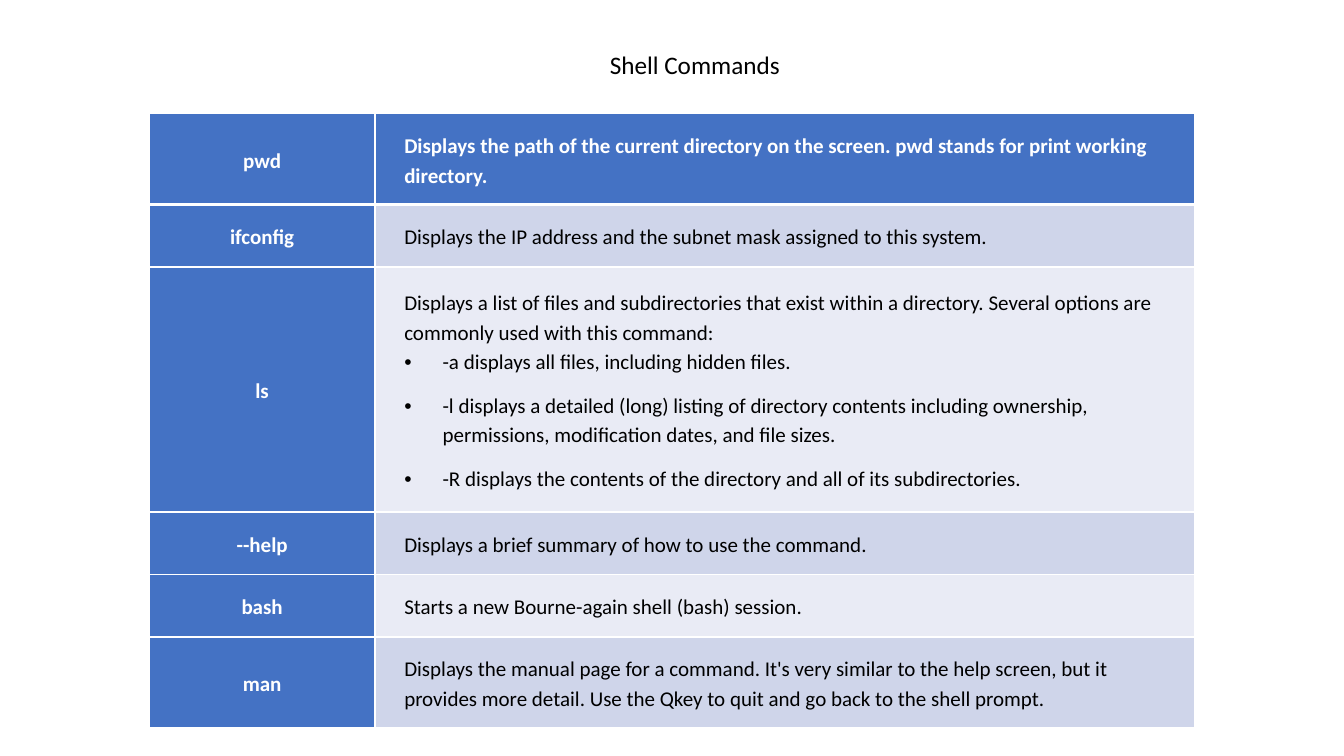
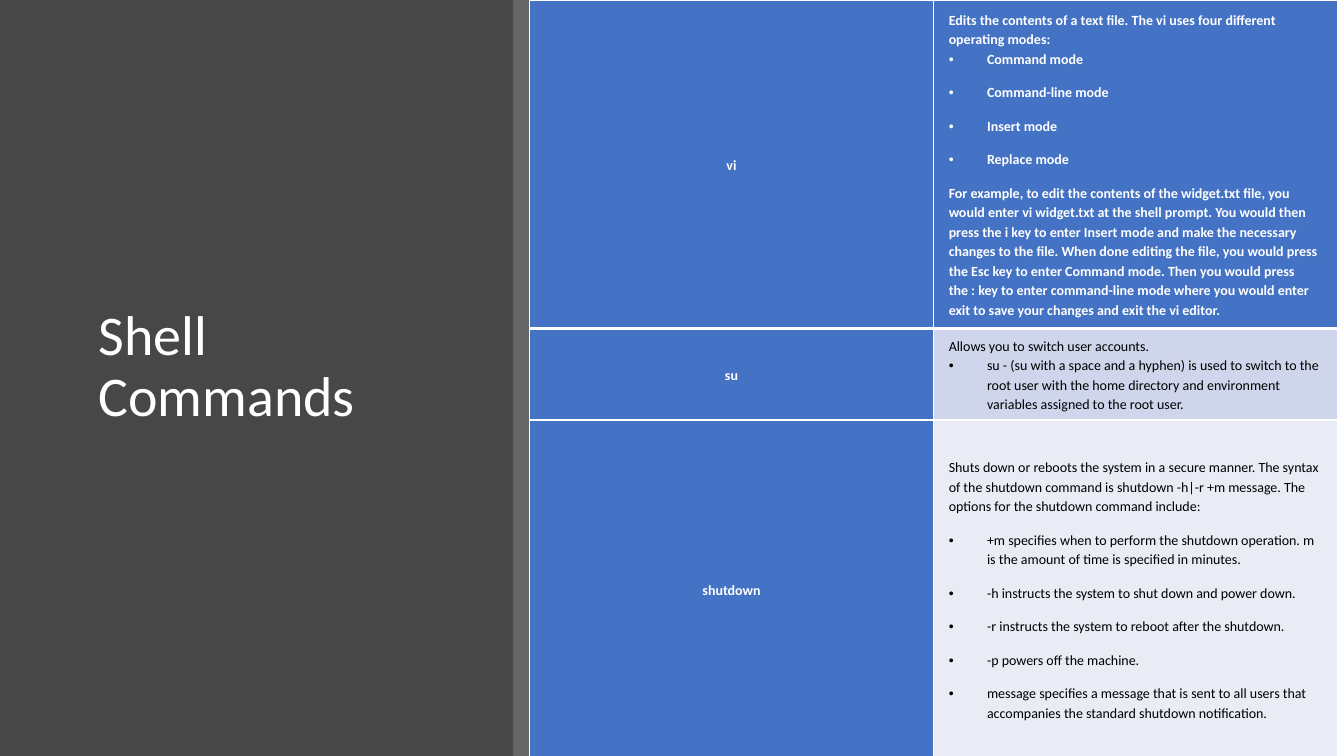
from typing import NamedTuple

from lxml import etree
from pptx import Presentation
from pptx import util as u
from pptx.dml import color
from pptx.enum import shapes, text
from pptx.oxml import ns

FONT = "Calibri"
WHITE, BLACK, GREY = "FFFFFF", "000000", "404040"
BLUE, BANDS = "4472C4", ("E9EBF5", "CFD5EA")


class Line(NamedTuple):
    """One paragraph: its words, the points after it, and a bullet or not."""
    words: str
    gap: int = 0
    dot: bool = False


def item(words):
    return Line(words, 10, True)


# Command, then the paragraphs that explain it
BASICS = [
    ("pwd", [Line("Displays the path of the current directory on the screen. "
                  "pwd stands for print working directory.")]),
    ("ifconfig", [Line("Displays the IP address and the subnet mask assigned "
                       "to this system.")]),
    ("ls", [
        Line("Displays a list of files and subdirectories that exist within a "
             "directory. Several options are commonly used with this command:"),
        item("-a displays all files, including hidden files."),
        item("-l displays a detailed (long) listing of directory contents "
             "including ownership, permissions, modification dates, and file sizes."),
        item("-R displays the contents of the directory and all of its "
             "subdirectories."),
    ]),
    ("--help", [Line("Displays a brief summary of how to use the command.")]),
    ("bash", [Line("Starts a new Bourne-again shell (bash) session.")]),
    ("man", [Line("Displays the manual page for a command. It's very similar to "
                  "the help screen, but it provides more detail. Use the Qkey to "
                  "quit and go back to the shell prompt.")]),
]
TOOLS = [
    ("vi", [
        Line("Edits the contents of a text file. The vi uses four different "
             "operating modes:"),
        item("Command mode"),
        item("Command-line mode"),
        item("Insert mode"),
        item("Replace mode"),
        Line("For example, to edit the contents of the widget.txt file, you would "
             "enter vi widget.txt at the shell prompt. You would then press the i "
             "key to enter Insert mode and make the necessary changes to the file. "
             "When done editing the file, you would press the Esc key to enter "
             "Command mode. Then you would press the : key to enter command-line "
             "mode where you would enter exit to save your changes and exit the vi "
             "editor."),
    ]),
    ("su", [
        Line("Allows you to switch user accounts."),
        item("su - (su with a space and a hyphen) is used to switch to the root "
             "user with the home directory and environment variables assigned to "
             "the root user."),
    ]),
    ("shutdown", [
        Line("Shuts down or reboots the system in a secure manner. The syntax of "
             "the shutdown command is shutdown -h|-r +m message. The options for "
             "the shutdown command include:", 10),
        item("+m specifies when to perform the shutdown operation. m is the amount "
             "of time is specified in minutes."),
        item("-h instructs the system to shut down and power down."),
        item("-r instructs the system to reboot after the shutdown."),
        item("-p powers off the machine."),
        item("message specifies a message that is sent to all users that "
             "accompanies the standard shutdown notification."),
    ]),
]


def rgb(code):
    return color.RGBColor.from_string(code)


def add(node, tag, **attrs):
    return etree.SubElement(node, ns.qn(tag), **attrs)


def paint(fill, code):
    fill.solid()
    fill.fore_color.rgb = rgb(code)


def write(par, words, size, ink, bold=False):
    run = par.add_run()
    run.text = words
    font = run.font
    font.name, font.size, font.bold = FONT, u.Pt(size), bold
    font.color.rgb = rgb(ink)


def bullet(par):
    props = par._p.get_or_add_pPr()
    props.set("marL", str(u.Inches(0.38)))
    props.set("indent", str(u.Inches(-0.38)))
    add(props, "a:buFont", typeface="Arial")
    add(props, "a:buChar", char="•")


def border(cell, widths):
    props = cell._tc.get_or_add_tcPr()
    for side, width in zip("LRTB", widths):
        line = add(props, f"a:ln{side}", w=str(u.Pt(width)))
        add(add(line, "a:solidFill"), "a:srgbClr", val=WHITE)


def fill_cell(cell, lines, size, ink, bold, back, pads, align):
    paint(cell.fill, back)
    cell.vertical_anchor = text.MSO_ANCHOR.MIDDLE
    cell.margin_left = cell.margin_right = u.Inches(pads[0])
    cell.margin_top = cell.margin_bottom = u.Inches(pads[1])
    frame = cell.text_frame
    for i, line in enumerate(lines):
        par = frame.add_paragraph() if i else frame.paragraphs[0]
        par.alignment, par.line_spacing = align, 1.15
        par.space_after = u.Pt(line.gap)
        if line.dot:
            bullet(par)
        write(par, line.words, size, ink, bold)


def grid(slide, left, top, cols, rows, data, size, side, pads):
    """Command table; pads are the vertical margins of the two columns."""
    box = [u.Inches(n) for n in (left, top, sum(cols), sum(rows))]
    table = slide.shapes.add_table(len(rows), len(cols), *box).table
    table.horz_banding = False
    for col, width in zip(table.columns, cols):
        col.width = u.Inches(width)
    for r, (name, lines) in enumerate(data):
        table.rows[r].height = u.Inches(rows[r])
        # The heading row has a heavy rule below it
        widths = (1, 1, 3 if r == 1 else 1, 3 if r == 0 else 1)
        left_cell, right_cell = table.cell(r, 0), table.cell(r, 1)
        for cell in (left_cell, right_cell):
            border(cell, widths)
        fill_cell(left_cell, [Line(name)], size, WHITE, True, BLUE,
                  (side, pads[0]), text.PP_ALIGN.CENTER)
        head = r == 0
        fill_cell(right_cell, lines, size, WHITE if head else BLACK, head,
                  BLUE if head else BANDS[r % 2], (side, pads[1]),
                  text.PP_ALIGN.LEFT)


def title(slide, box, size, ink, wrap):
    frame = slide.shapes.add_textbox(*[u.Inches(n) for n in box]).text_frame
    frame.word_wrap = wrap
    par = frame.paragraphs[0]
    if wrap:
        frame.vertical_anchor = text.MSO_ANCHOR.BOTTOM
        par.line_spacing, par.space_after = 0.9, u.Pt(6)
    else:
        frame.auto_size = text.MSO_AUTO_SIZE.SHAPE_TO_FIT_TEXT
    write(par, "Shell Commands", size, ink)


def panel(slide, width, code, alpha):
    shape = slide.shapes.add_shape(shapes.MSO_SHAPE.RECTANGLE, 0, 0,
                                   u.Inches(width), u.Inches(7.5))
    shape.shadow.inherit = False
    shape.line.fill.background()
    paint(shape.fill, code)
    tone = shape._element.spPr.find(".//" + ns.qn("a:srgbClr"))
    add(tone, "a:alpha", val=str(alpha * 1000))


def main():
    deck = Presentation()
    deck.slide_width, deck.slide_height = u.Inches(13.33), u.Inches(7.5)
    blank = deck.slide_layouts[6]

    # Basic commands
    slide = deck.slides.add_slide(blank)
    grid(slide, 1.48, 1.13, (2.24, 8.13), (0.9, 0.62, 2.43, 0.62, 0.62, 0.9),
         BASICS, 15, 0.29, (0.07, 0.15))
    title(slide, (5.95, 0.44, 1.96, 0.4), 18, BLACK, False)

    # Editor and system commands beside a dark panel
    slide = deck.slides.add_slide(blank)
    panel(slide, 5.25, BLACK, 60)
    panel(slide, 5.09, GREY, 80)
    title(slide, (0.88, 1.23, 3.66, 3.07), 40, WHITE, True)
    grid(slide, 5.25, 0, (4.01, 4.01), (3.26, 0.88, 3.36),
         TOOLS, 10, 0.15, (0.04, 0.07))

    deck.save("out.pptx")


if __name__ == "__main__":
    main()
